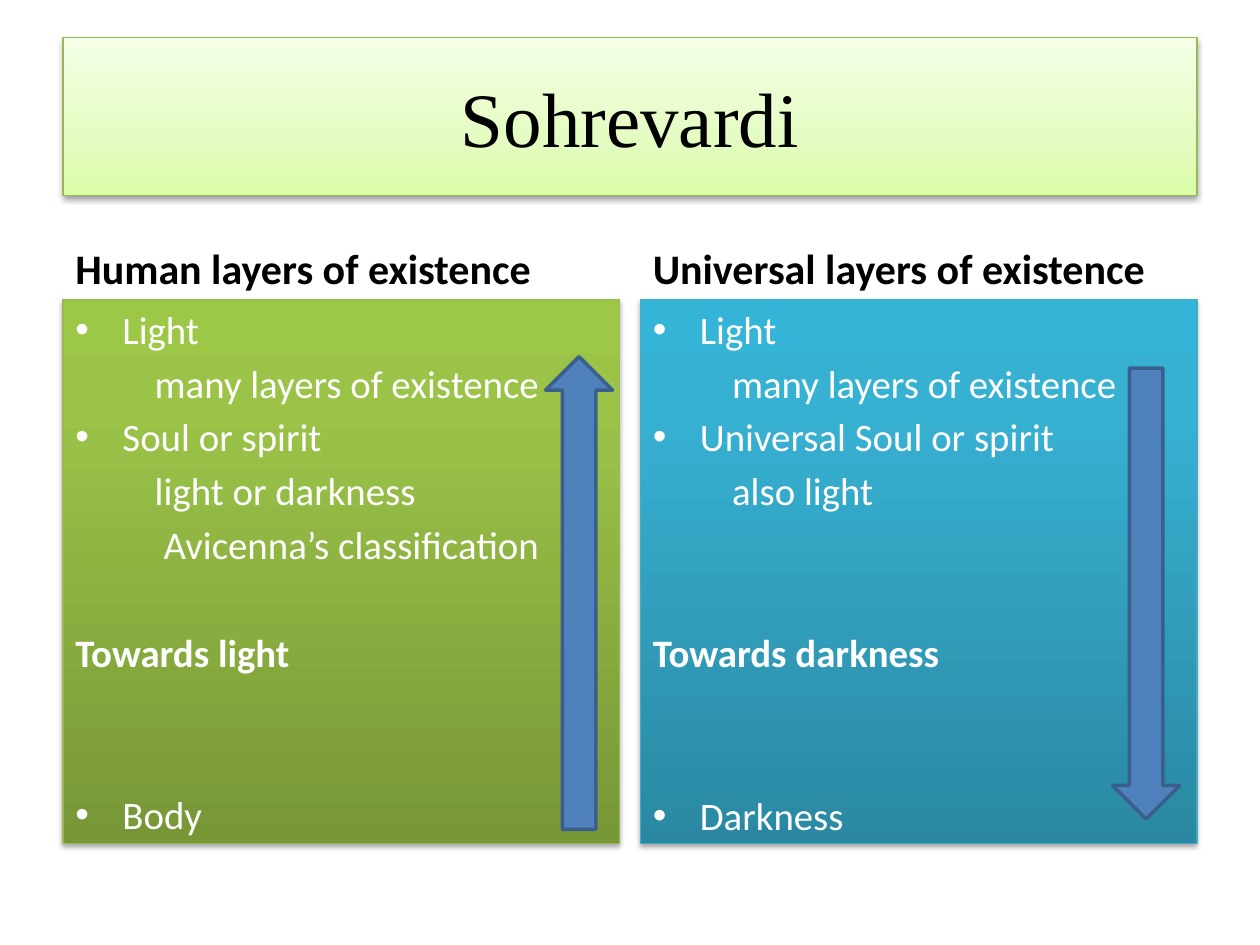
import copy
from dataclasses import dataclass

import lxml.etree
import pptx
import pptx.dml.color
import pptx.enum.shapes
import pptx.enum.text
import pptx.oxml.ns
import pptx.util
from pptx.util import Cm, Pt

RGB = pptx.dml.color.RGBColor.from_string
SHAPE = pptx.enum.shapes.MSO_SHAPE
ANCHOR = pptx.enum.text.MSO_ANCHOR
ALIGN = pptx.enum.text.PP_ALIGN
qn = pptx.oxml.ns.qn


@dataclass(frozen=True)
class Theme:
    title_font: str = "Times New Roman"
    body_font: str = "Calibri"
    title_size: float = 44
    heading_size: float = 24
    body_size: float = 22.2
    dark: str = "000000"
    light: str = "FFFFFF"
    pale_green: tuple = ((0, "DAFDA7"), (35, "E4FCC2"), (100, "F5FFE7"))
    green: tuple = ((0, "779737"), (80, "9BC348"), (100, "9DC746"))
    blue: tuple = ((0, "2A88A2"), (80, "37B1D2"), (100, "34B4D6"))
    green_line: str = "98B955"
    blue_line: str = "46AAC5"
    arrow: str = "4F81BD"
    arrow_line: str = "3A5F8C"


theme = Theme()


def style_panel(panel, stops, line, shadow_alpha, shadow_distance):
    """Give a panel a bottom-to-top gradient, a thin outline and a soft shadow."""
    panel.fill.gradient()
    panel.fill.gradient_angle = 90
    stop_list = panel.fill._fill._gradFill.find(qn("a:gsLst"))
    stop_list.insert(1, copy.deepcopy(stop_list[0]))
    for stop, (percent, colour) in zip(panel.fill.gradient_stops, stops):
        stop.position = percent / 100
        stop.color.rgb = RGB(colour)
    panel.line.color.rgb = RGB(line)
    panel.line.width = Pt(0.75)

    panel.shadow.inherit = False
    effects = panel._element.spPr.find(qn("a:effectLst"))
    shadow = lxml.etree.SubElement(
        effects, qn("a:outerShdw"), blurRad=str(Pt(3.1)),
        dist=str(Pt(shadow_distance)), dir="5400000", rotWithShape="0")
    colour = lxml.etree.SubElement(shadow, qn("a:srgbClr"), val=theme.dark)
    lxml.etree.SubElement(colour, qn("a:alpha"), val=str(shadow_alpha * 1000))


def style_text(paragraph, font, size, colour, bold=False):
    for run in paragraph.runs:
        run.font.name = font
        run.font.size = Pt(size)
        run.font.color.rgb = RGB(colour)
        run.font.bold = bold


deck = pptx.Presentation()
deck.slide_width, deck.slide_height = Cm(25.4), Cm(19.05)
slide = deck.slides.add_slide(deck.slide_layouts[6])
shapes = slide.shapes

margin = Cm(1.27)
title = shapes.add_shape(SHAPE.RECTANGLE, margin, Cm(0.76),
                         deck.slide_width - 2 * margin, Cm(3.18))
style_panel(title, theme.pale_green, theme.green_line, 38, 1.6)
title.text_frame.text = "Sohrevardi"
title.text_frame.vertical_anchor = ANCHOR.MIDDLE
title.text_frame.paragraphs[0].alignment = ALIGN.CENTER
style_text(title.text_frame.paragraphs[0], theme.title_font, theme.title_size, theme.dark)

# Each line: kind, text, number of line heights left empty above it
columns = [
    ("Human layers of existence", theme.green, theme.green_line, [
        ("layer", "Light", 0),
        ("detail", "many layers of existence", 0),
        ("layer", "Soul or spirit", 0),
        ("detail", "light or darkness", 0),
        ("deeper", "Avicenna’s classification", 0),
        ("direction", "Towards light", 1),
        ("layer", "Body", 2),
    ]),
    ("Universal layers of existence", theme.blue, theme.blue_line, [
        ("layer", "Light", 0),
        ("detail", "many layers of existence", 0),
        ("layer", "Universal Soul or spirit", 0),
        ("detail", "also light", 0),
        ("direction", "Towards darkness", 2),
        ("layer", "Darkness", 2),
    ]),
]
column_width = Cm(11.22)
column_lefts = [margin, deck.slide_width - margin - column_width]
heading_top, heading_height = Cm(4.26), Cm(1.78)
panel_top = heading_top + heading_height
hanging = Cm(0.95)
indents = {"layer": hanging, "detail": Cm(1.87), "deeper": Cm(2.05), "direction": 0}
indents["detail"], indents["deeper"] = Cm(1.6), Cm(1.78)
line_gap, line_pitch = 4, 31.1

for left, (heading_text, stops, outline, lines) in zip(column_lefts, columns):
    heading = shapes.add_textbox(left, heading_top, column_width, heading_height)
    heading.text_frame.word_wrap = True
    heading.text_frame.vertical_anchor = ANCHOR.BOTTOM
    heading.text_frame.text = heading_text
    style_text(heading.text_frame.paragraphs[0], theme.body_font,
               theme.heading_size, theme.dark, bold=True)

    panel = shapes.add_shape(SHAPE.RECTANGLE, left, panel_top, column_width, Cm(10.97))
    style_panel(panel, stops, outline, 35, 1.8)
    frame = panel.text_frame
    frame.vertical_anchor = ANCHOR.TOP
    frame.text = "\n".join(text for _, text, _ in lines)
    for paragraph, (kind, _, empty_lines) in zip(frame.paragraphs, lines):
        paragraph.alignment = ALIGN.LEFT
        paragraph.space_before = Pt(line_gap + empty_lines * line_pitch)
        style_text(paragraph, theme.body_font, theme.body_size, theme.light,
                   bold=kind == "direction")
        properties = paragraph._p.get_or_add_pPr()
        properties.set("marL", str(indents[kind]))
        if kind == "layer":
            properties.set("indent", str(-hanging))
            lxml.etree.SubElement(properties, qn("a:buFont"), typeface="Arial")
            lxml.etree.SubElement(properties, qn("a:buChar"), char="•")

for direction, left, top, height in [
    (SHAPE.DOWN_ARROW, Cm(22.43), Cm(7.42), Cm(9.09)),
    (SHAPE.UP_ARROW, Cm(11), Cm(7.19), Cm(9.53)),
]:
    arrow = shapes.add_shape(direction, left, top, Cm(1.35), height)
    arrow.shadow.inherit = False
    arrow.fill.solid()
    arrow.fill.fore_color.rgb = RGB(theme.arrow)
    arrow.line.color.rgb = RGB(theme.arrow_line)
    arrow.line.width = Pt(2)

deck.save("out.pptx")
